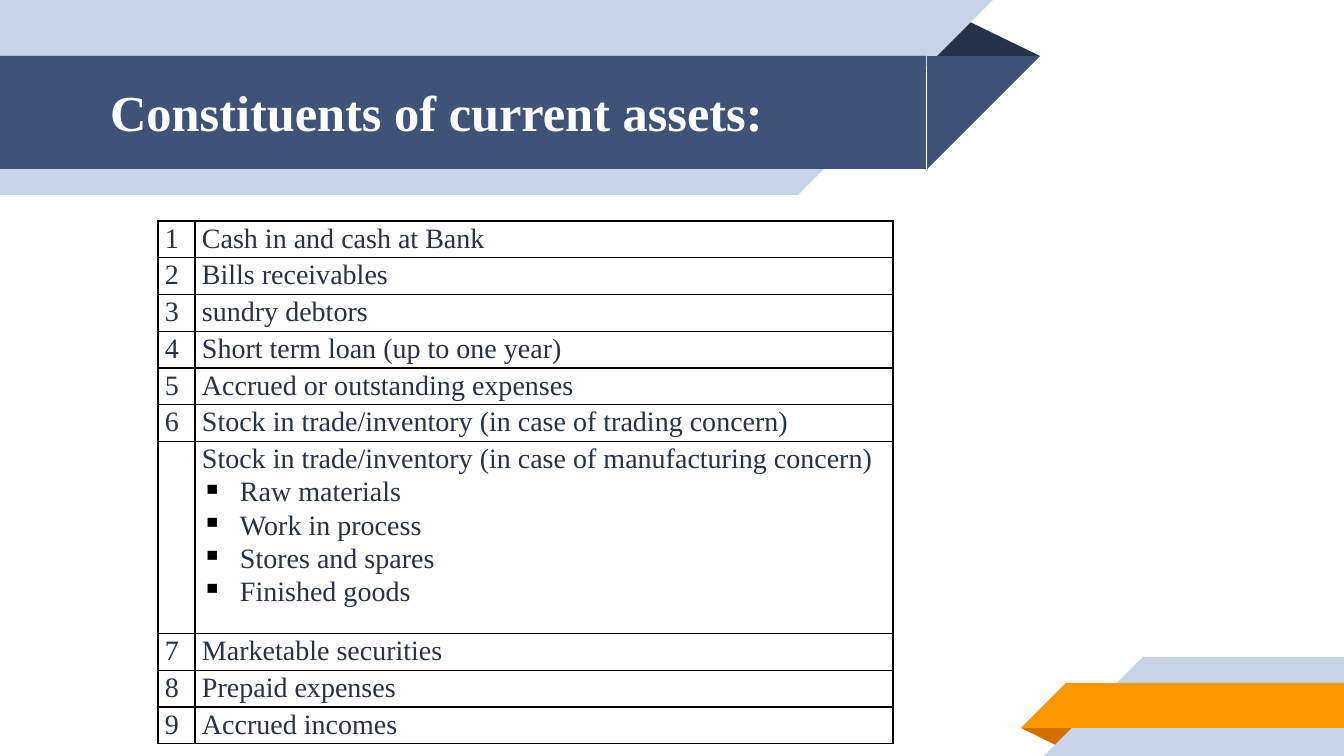
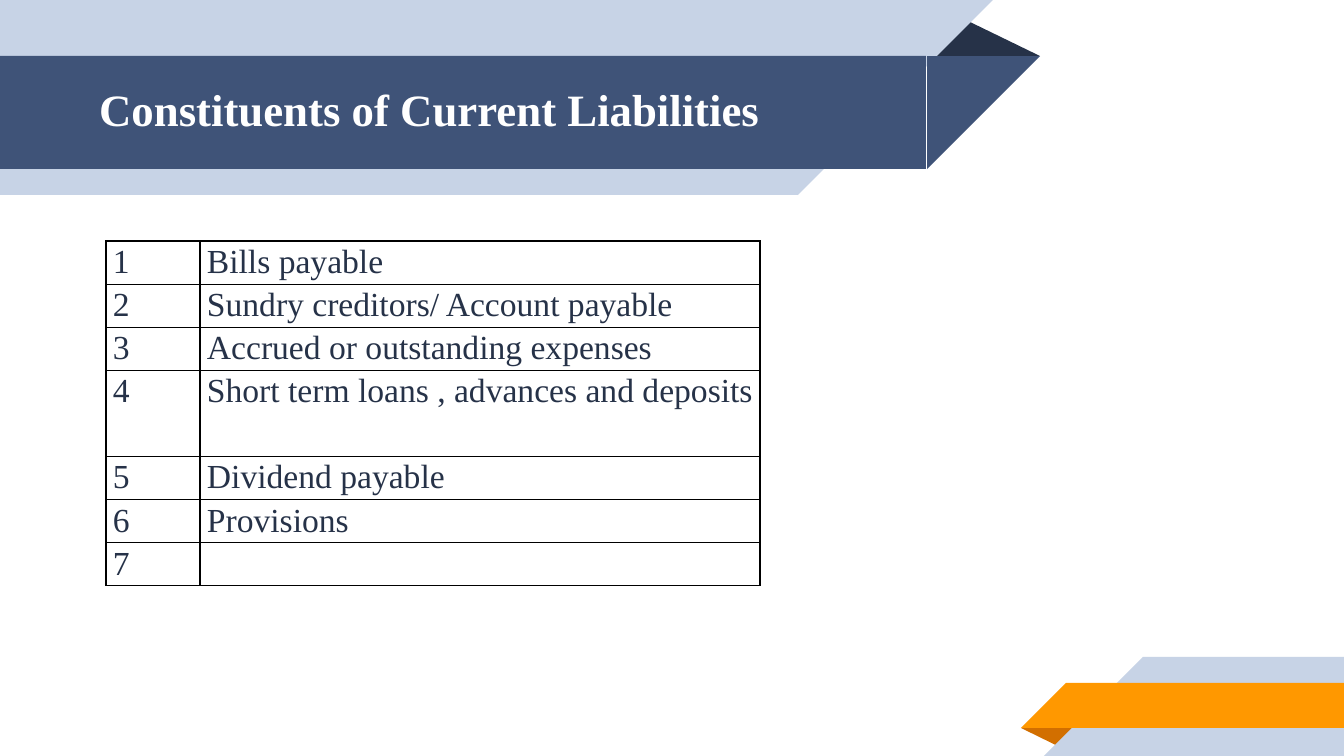
from pptx import Presentation
from pptx.dml.color import RGBColor
from pptx.enum.shapes import MSO_SHAPE
from pptx.enum.text import MSO_ANCHOR, MSO_AUTO_SIZE, PP_ALIGN
from pptx.oxml.ns import qn
from pptx.oxml.xmlchemy import OxmlElement
from pptx.util import Emu, Pt

RECT, CORNER, FOLD = MSO_SHAPE.RECTANGLE, MSO_SHAPE.RIGHT_TRIANGLE, MSO_SHAPE.ISOSCELES_TRIANGLE
TOP, JUSTIFY, NO_FIT = MSO_ANCHOR.TOP, PP_ALIGN.JUSTIFY, MSO_AUTO_SIZE.NONE

# Content
SLIDES = [
    {
        "title": "Constituents of current assets:",
        "title_at": (100, 72, 700, 72), "title_size": 36,
        "table_at": (158, 221), "cols": (37, 698), "height": 523, "tall": {6: 192}, "size": 20,
        "rows": [
            ("1", "Cash in and cash at Bank"),
            ("2", "Bills receivables"),
            ("3", "sundry debtors"),
            ("4", "Short term loan (up to one year)"),
            ("5", "Accrued or outstanding expenses"),
            ("6", "Stock in trade/inventory (in case of trading concern)"),
            ("", "Stock in trade/inventory (in case of manufacturing concern)",
             "Raw materials", "Work in process", "Stores and spares", "Finished goods"),
            ("7", "Marketable securities"),
            ("8", "Prepaid expenses"),
            ("9", "Accrued incomes"),
        ],
    },
    {
        "title": "Constituents of Current Liabilities",
        "title_at": (89, 73, 700, 65), "title_size": 32,
        "table_at": (106, 241), "cols": (94, 560), "height": 345, "tall": {3: 86}, "size": 24,
        "rows": [
            ("1", "Bills payable"),
            ("2", "Sundry creditors/ Account payable"),
            ("3", "Accrued or outstanding expenses"),
            ("4", "Short term loans , advances and deposits"),
            ("5", "Dividend payable"),
            ("6", "Provisions"),
            ("7", ""),
        ],
    },
]

# Theme and scale
THEME = {
    "font": "Times New Roman", "spacing": 1.07,
    "ink": "263248", "navy": "3F5378", "pale": "C7D3E6", "orange": "FF9800",
    "rust": "D26F00", "white": "FFFFFF", "black": "000000",
}
SLIDE_W, SLIDE_H = 1344, 756
CELL_PAD, BULLET_INDENT = 7, 38

# Ribbons, back to front: preset, colour, box, rotation, mirrored
RIBBONS = [
    (FOLD, "ink", (925, 18, 115, 38), 0, False),
    (RECT, "pale", (0, 0, 798, 195), 0, False),
    (CORNER, "pale", (798, 0, 195, 195), 180, True),
    (RECT, "navy", (0, 56, 926, 113), 0, False),
    (CORNER, "navy", (927, 56, 113, 113), 180, True),
    (FOLD, "rust", (1021, 728, 57, 19), 180, False),
    (RECT, "pale", (1143, 657, 201, 99), 0, False),
    (CORNER, "pale", (1044, 657, 99, 99), 0, True),
    (RECT, "orange", (1066, 683, 278, 45), 0, False),
    (CORNER, "orange", (1021, 683, 45, 45), 0, True),
]


def px(n):
    return Emu(round(n * 914400 / 100.8))


def color(name):
    return RGBColor.from_string(THEME[name])


def add_ribbons(s, layout):
    """Draw the ribbons as one group and hand it to the shared layout."""
    group = s.shapes.add_group_shape()
    for preset, fill, box, rotation, mirrored in RIBBONS:
        sp = group.shapes.add_shape(preset, *map(px, box))
        sp.shadow.inherit = False
        sp.fill.solid()
        sp.fill.fore_color.rgb = color(fill)
        sp.line.fill.background()
        sp.rotation = rotation
        if mirrored:
            sp.element.spPr.find(qn("a:xfrm")).set("flipH", "1")
        if preset == FOLD:
            sp.adjustments[0] = 0.32
    for n, props in enumerate(group.element.iter(qn("p:cNvPr")), 100):
        props.set("id", str(n))
    layout.shapes.element.insert(2, group.element)


def write(p, text, size, ink, bold=False):
    p.alignment, p.line_spacing = JUSTIFY, THEME["spacing"]
    r = p.add_run()
    r.text = text
    look = {"name": THEME["font"], "size": Pt(size), "bold": bold}
    for key, value in look.items():
        setattr(r.font, key, value)
    r.font.color.rgb = color(ink)


def add_title(s, spec_):
    sp = s.shapes.title
    sp.left, sp.top, sp.width, sp.height = map(px, spec_["title_at"])
    tf = sp.text_frame
    tf.word_wrap, tf.auto_size, tf.vertical_anchor = True, NO_FIT, TOP
    p = tf.paragraphs[0]
    write(p, spec_["title"], spec_["title_size"], "white", True)
    p.space_after = Pt(8)


def solid_color(tag, name):
    holder, rgb = OxmlElement(tag), OxmlElement("a:srgbClr")
    rgb.set("val", THEME[name])
    holder.append(rgb)
    return holder


def add_bullet(p):
    pPr = p._p.get_or_add_pPr()
    pPr.set("marL", str(px(BULLET_INDENT)))
    pPr.set("indent", str(-px(BULLET_INDENT)))
    mark = OxmlElement("a:buChar")
    mark.set("char", "▪")
    pPr.append(solid_color("a:buClr", "black"))
    pPr.append(mark)


def format_cell(cell):
    pads = {"margin_left": CELL_PAD, "margin_right": CELL_PAD, "margin_top": 0, "margin_bottom": 0}
    for key, value in pads.items():
        setattr(cell, key, px(value))
    cell.vertical_anchor = TOP
    tcPr = cell._tc.get_or_add_tcPr()
    for side in "LRTB":
        line = OxmlElement(f"a:ln{side}")
        line.set("w", str(Pt(1)))
        line.append(solid_color("a:solidFill", "black"))
        tcPr.append(line)
    cell.fill.background()


def add_list_table(s, data):
    rows, cols, tall = data["rows"], data["cols"], data["tall"]
    frame = s.shapes.add_table(len(rows), len(cols), *map(px, data["table_at"]),
                               px(sum(cols)), px(data["height"]))
    table = frame.table
    table.first_row = table.horz_banding = False
    for column, width in zip(table.columns, cols):
        column.width = px(width)
    plain = (data["height"] - sum(tall.values())) / (len(rows) - len(tall))
    for i, (number, text, *items) in enumerate(rows):
        table.rows[i].height = px(tall.get(i, plain))
        for j, value in enumerate((number, text)):
            cell = table.cell(i, j)
            format_cell(cell)
            if value:
                write(cell.text_frame.paragraphs[0], value, data["size"], "ink")
        for item in items:
            p = cell.text_frame.add_paragraph()
            write(p, item, data["size"], "ink")
            add_bullet(p)


def main():
    prs = Presentation()
    prs.slide_width, prs.slide_height = px(SLIDE_W), px(SLIDE_H)
    layout = prs.slide_layouts[5]
    for i, data in enumerate(SLIDES):
        s = prs.slides.add_slide(layout)
        if i == 0:
            add_ribbons(s, layout)
        add_title(s, data)
        add_list_table(s, data)
    prs.save("out.pptx")


if __name__ == "__main__":
    main()
